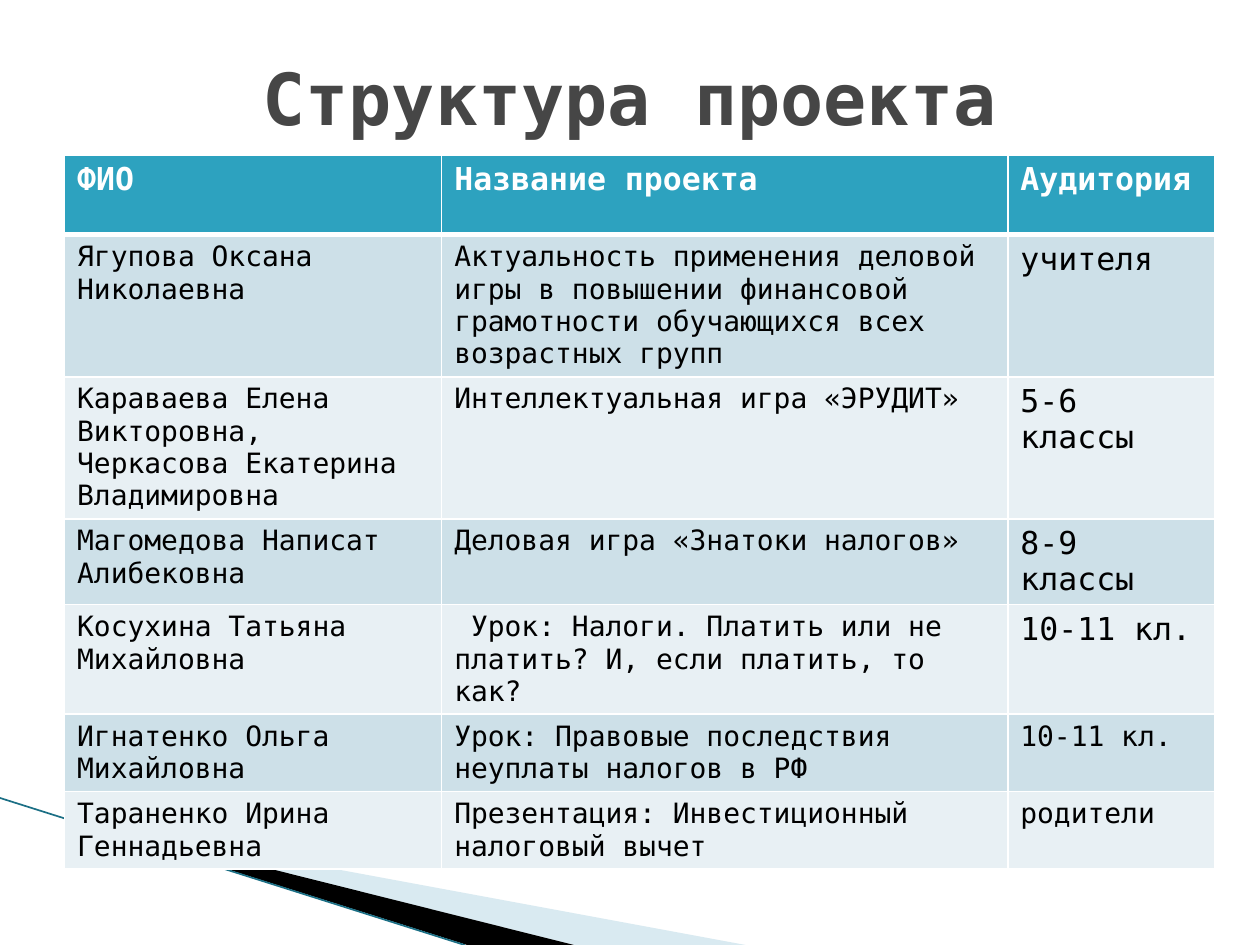
import pptx
import pptx.dml.color
import pptx.enum.shapes
import pptx.enum.text
import pptx.oxml
import pptx.oxml.ns
import pptx.util
from lxml import etree

Pt = pptx.util.Pt
COLORS = {
    "white": "FFFFFF", "black": "000000", "title": "464646", "header": "2DA2BF",
    "odd": "CDE0E8", "even": "E8F0F4", "wedge": "A0CBDC", "edge": "1B6F85",
}
COLUMNS = [215.5, 323.5, 118.5]
HEADER = ["ФИО", "Название проекта", "Аудитория"]
PROJECTS = [
    ("Ягупова Оксана Николаевна",
     "Актуальность применения деловой игры в повышении финансовой грамотности "
     "обучающихся всех возрастных групп", "учителя", 18),
    ("Караваева Елена Викторовна, Черкасова Екатерина Владимировна",
     "Интеллектуальная игра «ЭРУДИТ»", "5-6 классы", 18),
    ("Магомедова Написат Алибековна", "Деловая игра «Знатоки налогов»", "8-9 классы", 18),
    ("Косухина Татьяна Михайловна",
     " Урок: Налоги. Платить или не платить? И, если платить, то как?", "10-11 кл.", 18),
    ("Игнатенко Ольга Михайловна",
     "Урок: Правовые последствия неуплаты налогов в РФ", "10-11 кл.", 16),
    ("Тараненко Ирина Геннадьевна",
     "Презентация: Инвестиционный налоговый вычет", "родители", 16),
]


class Painter:
    """Draw styled elements on the current page."""

    def __init__(self, page, font):
        self.page = page
        self.font = font

    def color(self, name):
        return pptx.dml.color.RGBColor.from_string(COLORS[name])

    def text(self, para, text, size, color, bold=False):
        para.text = text
        para.font.name = self.font
        para.font.size = Pt(size)
        para.font.bold = bold
        para.font.color.rgb = self.color(color)

    def title(self, text, left, top, width, height):
        box = self.page.shapes.add_textbox(Pt(left), Pt(top), Pt(width), Pt(height))
        frame = box.text_frame
        frame.word_wrap = True
        frame.vertical_anchor = pptx.enum.text.MSO_ANCHOR.MIDDLE
        para = frame.paragraphs[0]
        para.alignment = pptx.enum.text.PP_ALIGN.CENTER
        self.text(para, text, 41, "title", True)

    def wedge(self, points, color, opacity=100):
        corners = [(Pt(x), Pt(y)) for x, y in points]
        builder = self.page.shapes.build_freeform(*corners[0])
        builder.add_line_segments(corners[1:])
        shape = builder.convert_to_shape()
        shape.shadow.inherit = False
        shape.line.fill.background()
        shape.fill.solid()
        shape.fill.fore_color.rgb = self.color(color)
        if opacity < 100:
            tone = shape._element.spPr.find(".//" + pptx.oxml.ns.qn("a:srgbClr"))
            etree.SubElement(tone, pptx.oxml.ns.qn("a:alpha"), val=str(opacity * 1000))

    def line(self, start, end, color, width):
        line = self.page.shapes.add_connector(
            pptx.enum.shapes.MSO_CONNECTOR.STRAIGHT, *map(Pt, start + end))
        line.line.color.rgb = self.color(color)
        line.line.width = Pt(width)
        etree.SubElement(line._element.spPr, pptx.oxml.ns.qn("a:effectLst"))

    def cell(self, cell, text, size, color, fill, bold, borders):
        self.text(cell.text_frame.paragraphs[0], text, size, color, bold)
        cell.fill.solid()
        cell.fill.fore_color.rgb = self.color(fill)
        properties = cell._tc.get_or_add_tcPr()
        for index, (side, width) in enumerate(borders.items()):
            border = pptx.oxml.parse_xml(
                f'<a:ln{side} {pptx.oxml.ns.nsdecls("a")} w="{Pt(width)}"><a:solidFill>'
                f'<a:srgbClr val="{COLORS["white"]}"/></a:solidFill></a:ln{side}>')
            properties.insert(index, border)

    def table(self, left, top, columns, header_height, row_height):
        height = header_height + row_height * len(PROJECTS)
        table = self.page.shapes.add_table(
            len(PROJECTS) + 1, len(columns), Pt(left), Pt(top),
            Pt(sum(columns)), Pt(height)).table
        for column, width in zip(table.columns, columns):
            column.width = Pt(width)
        for index, row in enumerate(table.rows):
            row.height = Pt(row_height if index else header_height)
        for column, text in enumerate(HEADER):
            self.cell(table.cell(0, column), text, 18, "white", "header", True,
                      {"L": 1, "R": 1, "T": 1, "B": 3})
        for row, (*texts, audience_size) in enumerate(PROJECTS, 1):
            for column, (text, size) in enumerate(zip(texts, (16, 16, audience_size))):
                self.cell(table.cell(row, column), text, size, "black",
                          "odd" if row % 2 else "even", False,
                          {"L": 1, "R": 1, "T": 3 if row == 1 else 1, "B": 1})


def main():
    deck = pptx.Presentation()
    deck.slide_width, deck.slide_height = Pt(720), Pt(540)
    painter = Painter(deck.slides.add_slide(deck.slide_layouts[6]), "DejaVu Sans Mono")
    painter.wedge([(39.6, 468.5), (426, 540), (328, 540), (39.6, 468)], "wedge", 40)
    painter.wedge([(38.2, 467.3), (328, 540), (267, 540), (38.9, 468)], "black")
    painter.line((0, 456), (265.5, 540), "edge", 0.95)
    painter.table(36.9, 88.75, COLUMNS, 45.4, 29.5)
    painter.title("Структура проекта", 36, 21.6, 648, 67)
    deck.save("out.pptx")


if __name__ == "__main__":
    main()
